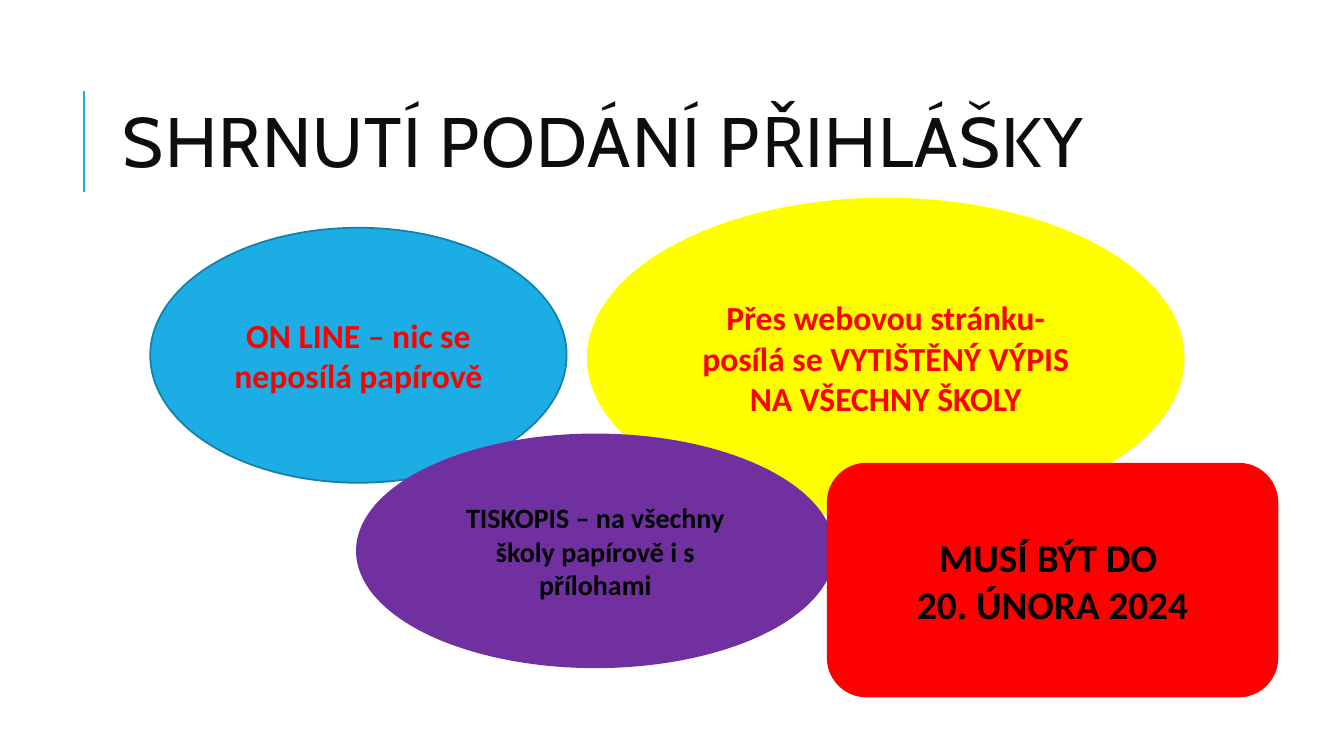
"""Build the slide summing up the ways to hand in an application."""
from dataclasses import dataclass

from lxml import etree
from pptx import Presentation
from pptx.dml.color import RGBColor
from pptx.enum import shapes, text
from pptx.util import Inches, Pt


@dataclass(frozen=True)
class Theme:
    """Colours, fonts and type sizes of the slide."""
    blue: str = "1CADE4"
    dark_blue: str = "1580A9"
    yellow: str = "FFFF00"
    purple: str = "7030A0"
    red: str = "FF0000"
    black: str = "000000"
    ink: str = "0D0D0D"
    title_font: str = "Cabin"
    body_font: str = "Calibri"
    title_size: int = 50
    large: int = 28
    medium: int = 24
    small: int = 20
    rule_width: float = 1.5
    outline_width: float = 1.25


THEME = Theme()


def style_run(r, color, **formats):
    """Apply font formats and a colour to a run."""
    for name, value in formats.items():
        setattr(r.font, name, value)
    r.font.color.rgb = RGBColor.from_string(color)


def style_line(line, color, width):
    """Set the colour and width of a line."""
    line.color.rgb = RGBColor.from_string(color)
    line.width = Pt(width)


def add_rule(s, x, top, bottom):
    """Draw the upright accent line beside the title."""
    c = s.shapes.add_connector(shapes.MSO_CONNECTOR.STRAIGHT,
                               Inches(x), Inches(bottom), Inches(x), Inches(top))
    style_line(c.line, THEME.blue, THEME.rule_width)
    ns = "http://schemas.openxmlformats.org/drawingml/2006/main"
    etree.SubElement(c._element.spPr, f"{{{ns}}}effectLst")


def add_title(s, box, title):
    """Add the slide title."""
    tf = s.shapes.add_textbox(*map(Inches, box)).text_frame
    tf.word_wrap = True
    tf.vertical_anchor = text.MSO_ANCHOR.MIDDLE
    p = tf.paragraphs[0]
    p.line_spacing = 0.8
    r = p.add_run()
    r.text = title
    style_run(r, THEME.ink, name=THEME.title_font, size=Pt(THEME.title_size))
    r.font._element.set("spc", "100")


def add_bubble(s, kind, box, fill, outline, lines, color, size):
    """Add a filled shape with centred bold text."""
    sp = s.shapes.add_shape(kind, *map(Inches, box))
    sp.shadow.inherit = False
    sp.fill.solid()
    sp.fill.fore_color.rgb = RGBColor.from_string(fill)
    style_line(sp.line, outline, THEME.outline_width)
    tf = sp.text_frame
    tf.word_wrap = True
    tf.vertical_anchor = text.MSO_ANCHOR.MIDDLE
    for i, line in enumerate(lines):
        p = tf.add_paragraph() if i else tf.paragraphs[0]
        p.alignment = text.PP_ALIGN.CENTER
        r = p.add_run()
        r.text = line
        style_run(r, color, name=THEME.body_font, size=Pt(size), bold=True)


def main():
    """Build and save the slide."""
    prs = Presentation()
    prs.slide_width, prs.slide_height = Inches(13.33), Inches(7.5)
    s = prs.slides.add_slide(prs.slide_layouts[6])
    add_rule(s, 0.83, 0.9, 1.9)
    add_title(s, (1.12, 0.64, 10.63, 1.64), "SHRNUTÍ PODÁNÍ PŘIHLÁŠKY")
    oval = shapes.MSO_SHAPE.OVAL
    rounded = shapes.MSO_SHAPE.ROUNDED_RECTANGLE
    t = THEME
    bubbles = [
        (oval, (1.49, 2.26, 4.13, 2.53), t.blue, t.dark_blue,
         ["ON LINE – nic se neposílá papírově"], t.red, t.medium),
        (oval, (5.83, 1.97, 5.91, 3.16), t.yellow, t.yellow,
         ["Přes webovou stránku- posílá se VYTIŠTĚNÝ VÝPIS NA VŠECHNY ŠKOLY"],
         t.red, t.medium),
        (oval, (3.54, 4.31, 4.73, 2.31), t.purple, t.purple,
         ["TISKOPIS – na všechny školy papírově i s přílohami"], t.black, t.small),
        (rounded, (8.21, 4.6, 4.46, 2.31), t.red, t.red,
         ["MUSÍ BÝT DO ", "20. ÚNORA 2024"], t.black, t.large),
    ]
    for bubble in bubbles:
        add_bubble(s, *bubble)
    prs.save("out.pptx")


if __name__ == "__main__":
    main()
